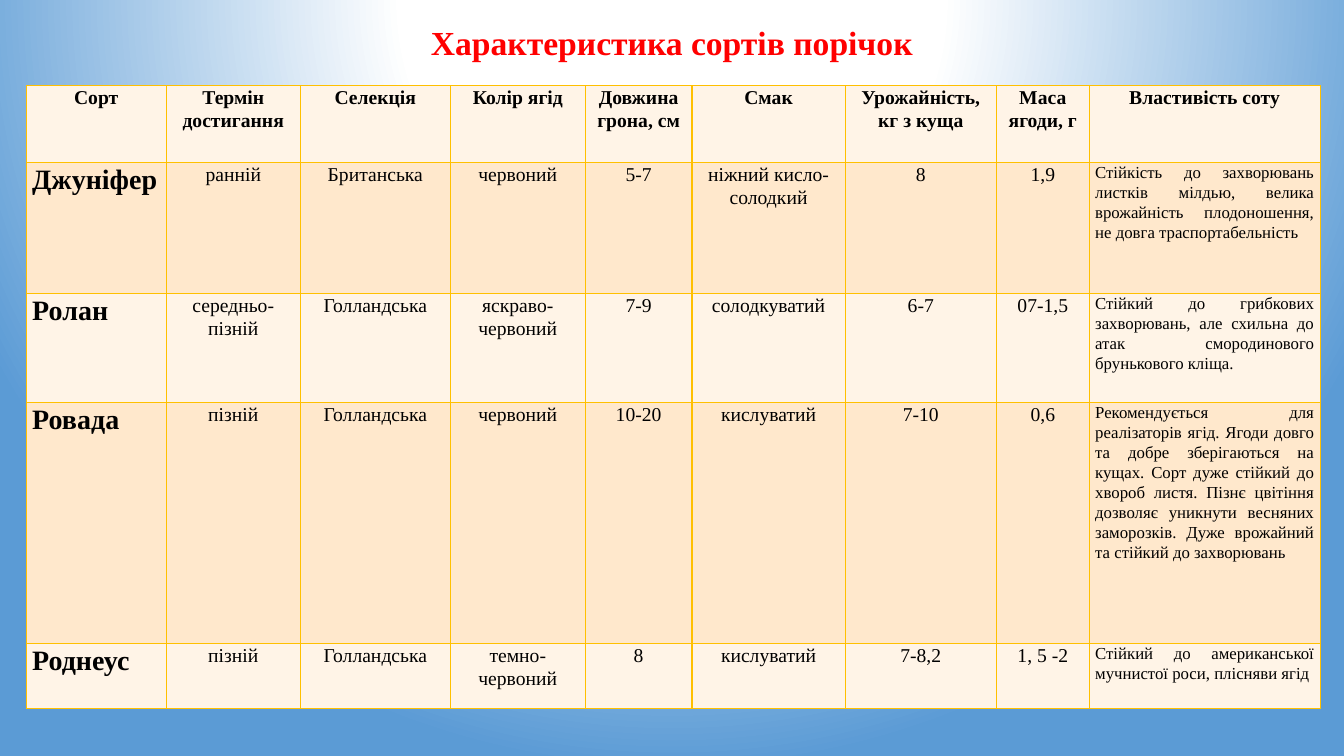
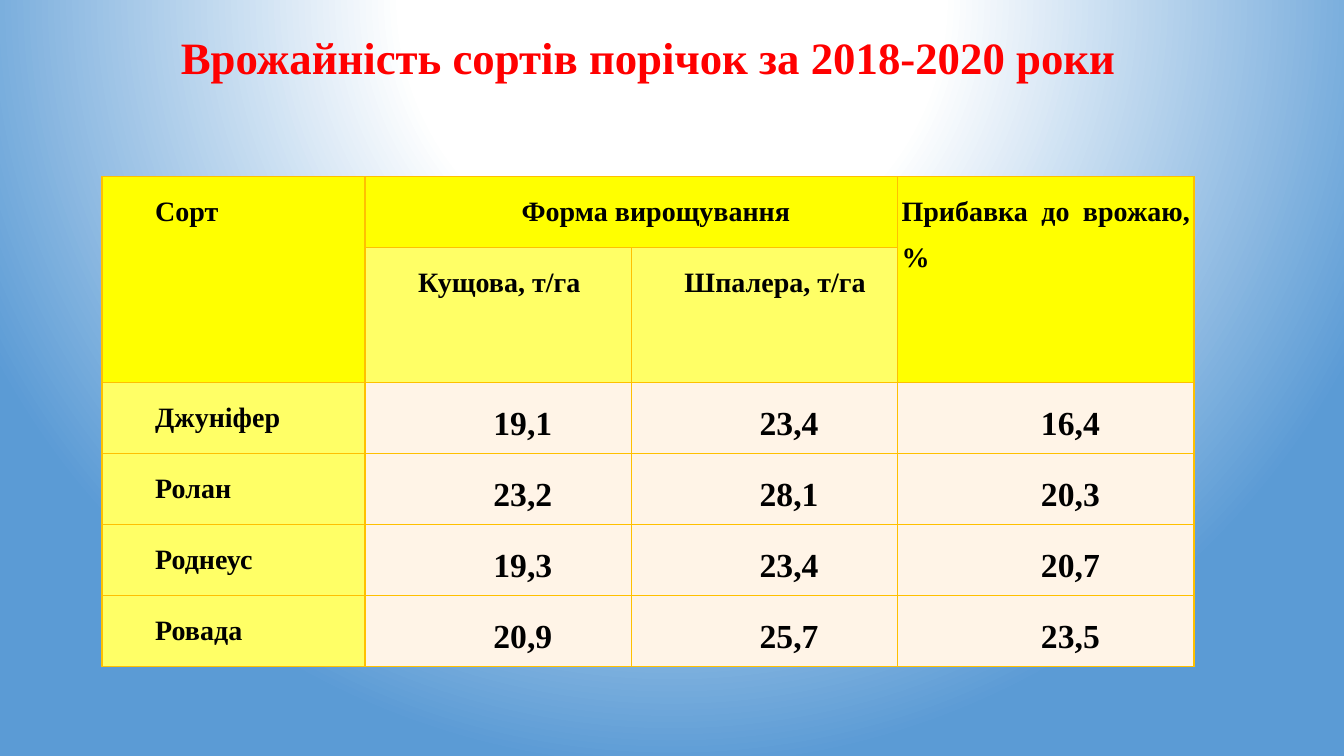
"""Build two slides that compare redcurrant varieties and their yields."""
from lxml import etree
from pptx import Presentation
from pptx.dml.color import RGBColor
from pptx.enum.text import MSO_ANCHOR, MSO_AUTO_SIZE, PP_ALIGN as Align
from pptx.oxml import parse_xml
from pptx.oxml.ns import nsdecls, qn
from pptx.util import Cm, Pt

FONT = "Times New Roman"
COLORS = {
    "title": "FF0000", "text": "000000", "border": "FFC000",
    "light": "FFF4E7", "dark": "FFE8CC",
    "header": "FFFF00", "subheader": "FFFF66",
    "centre": "FFFFFF", "edge": "5B9BD5",
}

VARIETIES = [
    ("Сорт", "Термін достигання", "Селекція", "Колір ягід", "Довжина грона, см",
     "Смак", "Урожайність, кг з куща", "Маса ягоди, г", "Властивість соту"),
    ("Джуніфер", "ранній", "Британська", "червоний", "5-7", "ніжний кисло-солодкий",
     "8", "1,9", "Стійкість до захворювань листків мілдью, велика врожайність "
     "плодоношення, не довга траспортабельність"),
    ("Ролан", "середньо-пізній", "Голландська", "яскраво- червоний", "7-9",
     "солодкуватий", "6-7", "07-1,5", "Стійкий до грибкових захворювань, але "
     "схильна до атак смородинового брунькового кліща."),
    ("Ровада", "пізній", "Голландська", "червоний", "10-20", "кислуватий", "7-10",
     "0,6", "Рекомендується для реалізаторів ягід. Ягоди довго та добре "
     "зберігаються на кущах. Сорт дуже стійкий до хвороб листя. Пізнє цвітіння "
     "дозволяє уникнути весняних заморозків. Дуже врожайний та стійкий до "
     "захворювань"),
    ("Роднеус", "пізній", "Голландська", "темно- червоний", "8", "кислуватий",
     "7-8,2", "1, 5 -2", "Стійкий до американської мучнистої роси, плісняви ягід"),
]
YIELDS = [
    ("Сорт", "Форма вирощування", "", "Прибавка до врожаю, %"),
    ("", "Кущова, т/га", "Шпалера, т/га", ""),
    ("Джуніфер", "19,1", "23,4", "16,4"),
    ("Ролан", "23,2", "28,1", "20,3"),
    ("Роднеус", "19,3", "23,4", "20,7"),
    ("Ровада", "20,9", "25,7", "23,5"),
]
YIELD_MERGES = [((0, 0), (1, 0)), ((0, 1), (0, 2)), ((0, 3), (1, 3))]


def variety_style(row, column):
    style = {"fill": "dark" if row % 2 else "light", "size": 14, "bold": row == 0,
             "align": Align.CENTER, "spacing": 1.07, "indent": 0}
    if row and column == 0:
        style.update(size=20, bold=True, align=Align.LEFT)
    elif row and column == len(VARIETIES[0]) - 1:
        style.update(size=12, align=Align.JUSTIFY)
    return style


def yield_style(row, column):
    style = {"fill": "light", "size": 24, "bold": True,
             "align": Align.CENTER, "spacing": 1.5, "indent": 1.24}
    if row < 2:
        fill = "subheader" if row == 1 and column in (1, 2) else "header"
        align = Align.CENTER if (row, column) == (0, 1) else Align.JUSTIFY
        style.update(fill=fill, size=20, align=align, indent=0 if column == 3 else 1.24)
    elif column == 0:
        style.update(fill="subheader", size=20, align=Align.LEFT)
    return style


def set_background(master):
    """Give every slide the same radial gradient."""
    stops = "".join(
        f'<a:gs pos="{position * 1000}"><a:srgbClr val="{COLORS[name]}"/></a:gs>'
        for position, name in ((0, "centre"), (35, "centre"), (100, "edge")))
    master.background.fill.solid()
    properties = master.element.find(".//" + qn("p:bgPr"))
    properties.replace(properties[0], parse_xml(
        f'<a:gradFill {nsdecls("a")} rotWithShape="1"><a:gsLst>{stops}</a:gsLst>'
        '<a:path path="circle"><a:fillToRect l="50000" t="-80000" r="50000" '
        'b="180000"/></a:path></a:gradFill>'))


def set_font(paragraph, size, color, bold):
    font = paragraph.font
    font.name, font.size, font.bold = FONT, Pt(size), bold
    font.color.rgb = RGBColor.from_string(COLORS[color])


def add_titled_slide(presentation, text, size, box):
    slide = presentation.slides.add_slide(presentation.slide_layouts[5])
    title = slide.shapes.title
    title.left, title.top, title.width, title.height = map(Cm, box)
    frame = title.text_frame
    frame.text = text
    frame.word_wrap = False
    frame.auto_size = MSO_AUTO_SIZE.SHAPE_TO_FIT_TEXT
    frame.vertical_anchor = MSO_ANCHOR.TOP
    paragraph = frame.paragraphs[0]
    paragraph.alignment = Align.CENTER
    set_font(paragraph, size, "title", True)
    return slide


def format_cell(cell, text, style, margins):
    properties = cell._tc.get_or_add_tcPr()
    for side in "LRTB":
        line = etree.SubElement(properties, qn(f"a:ln{side}"), w=str(Pt(1)))
        fill = etree.SubElement(line, qn("a:solidFill"))
        etree.SubElement(fill, qn("a:srgbClr"), val=COLORS["border"])
    cell.fill.solid()
    cell.fill.fore_color.rgb = RGBColor.from_string(COLORS[style["fill"]])
    cell.margin_left = cell.margin_right = Cm(margins[0])
    cell.margin_top = cell.margin_bottom = Cm(margins[1])
    if not text:
        return
    cell.text = text
    paragraph = cell.text_frame.paragraphs[0]
    paragraph.alignment = style["align"]
    paragraph.line_spacing = style["spacing"]
    paragraph._p.get_or_add_pPr().set("indent", str(Cm(style["indent"])))
    set_font(paragraph, style["size"], "text", style["bold"])


def add_grid(slide, rows, corner, widths, heights, margins, style_for, merges=()):
    table = slide.shapes.add_table(
        len(rows), len(widths), *map(Cm, corner),
        Cm(sum(widths)), Cm(sum(heights))).table
    table.first_row = table.horz_banding = False
    for column, width in zip(table.columns, widths):
        column.width = Cm(width)
    for row, height in zip(table.rows, heights):
        row.height = Cm(height)
    for first, last in merges:
        table.cell(*first).merge(table.cell(*last))
    for r, texts in enumerate(rows):
        for c, text in enumerate(texts):
            format_cell(table.cell(r, c), text, style_for(r, c), margins)


def main():
    presentation = Presentation()
    presentation.slide_width, presentation.slide_height = Cm(33.87), Cm(19.05)
    set_background(presentation.slide_master)

    slide = add_titled_slide(presentation, "Характеристика сортів порічок", 24,
                             (10.54, 0.43, 12.78, 1.27))
    add_grid(slide, VARIETIES, (0.66, 2.16),
             [3.53, 3.38, 3.78, 3.4, 2.69, 3.86, 3.81, 2.34, 5.82],
             [1.93, 3.3, 2.75, 6.07, 1.65], (0.15, 0), variety_style)

    slide = add_titled_slide(presentation, "Врожайність сортів порічок за 2018-2020 роки",
                             32, (4.19, 0.61, 24.31, 1.63))
    add_grid(slide, YIELDS, (2.57, 4.45), [6.63, 6.71, 6.71, 7.47],
             [1.79, 3.4] + [1.79] * 4, (0.1, 0.1), yield_style, YIELD_MERGES)

    presentation.save("out.pptx")


if __name__ == "__main__":
    main()
